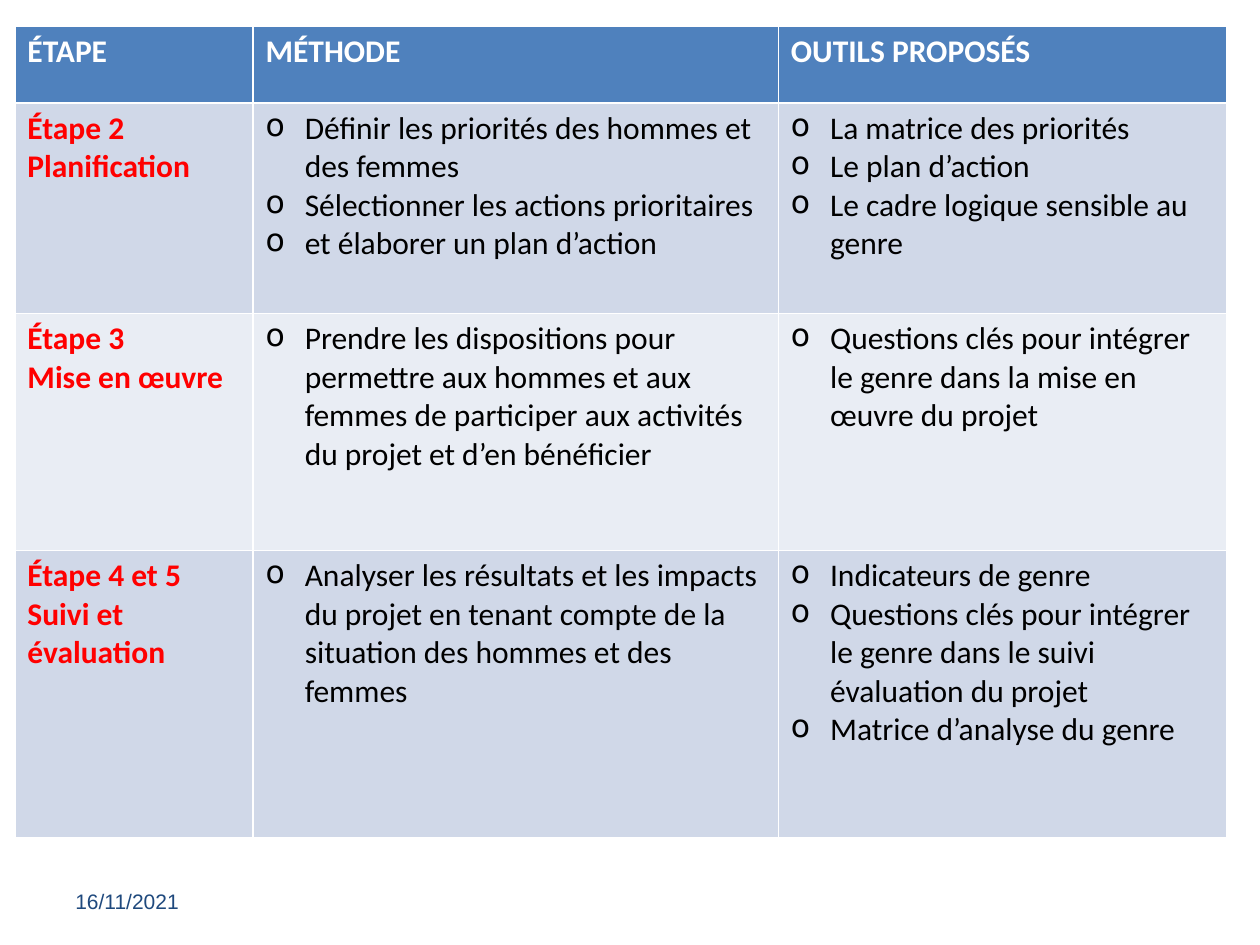
"""Build a slide with a table of project steps, methods and gender tools."""
import pptx
import pptx.dml.color
import pptx.enum.text
import pptx.oxml.ns
import pptx.util
import lxml.etree

Cm = pptx.util.Cm
COLORS = {"header": "4F81BD", "odd": "D0D8E8", "even": "E9EDF4", "white": "FFFFFF",
          "step": "FF0000", "body": "000000", "date": "1F497D"}
HEADERS = ["ÉTAPE", "MÉTHODE", "OUTILS PROPOSÉS"]
STEPS = [
    (["Étape 2", "Planification"],
     ["Définir les priorités des hommes et des femmes",
      "Sélectionner les actions prioritaires",
      "et élaborer un plan d’action"],
     ["La matrice des priorités", "Le plan d’action",
      "Le cadre logique sensible au genre"]),
    (["Étape 3", "Mise en œuvre"],
     ["Prendre les dispositions pour permettre aux hommes et aux femmes "
      "de participer aux activités du projet et d’en bénéficier"],
     ["Questions clés pour intégrer le genre dans la mise en œuvre du projet"]),
    (["Étape 4 et 5", "Suivi et évaluation"],
     ["Analyser les résultats et les impacts du projet en tenant compte "
      "de la situation des hommes et des femmes"],
     ["Indicateurs de genre",
      "Questions clés pour intégrer le genre dans le suivi évaluation du projet",
      "Matrice d’analyse du genre"]),
]
DATE = "16/11/2021"
COL_WIDTHS = [4.8, 10.59, 9.04]
ROW_HEIGHTS = [1.55, 4.24, 4.78, 5.79]
INDENT = Cm(0.79)
FORMATS = {
    "header": {"name": "Calibri", "size": pptx.util.Pt(18), "bold": True},
    "step": {"name": "Calibri", "size": pptx.util.Pt(18), "bold": True},
    "body": {"name": "Calibri", "size": pptx.util.Pt(18), "bold": False},
    "date": {"name": "Arial", "size": pptx.util.Pt(12), "bold": False},
}


def rgb(name):
    return pptx.dml.color.RGBColor.from_string(COLORS[name])


def add_bullet(p):
    pPr = p._p.get_or_add_pPr()
    pPr.set("marL", str(INDENT))
    pPr.set("indent", str(-INDENT))
    bu = lxml.etree.SubElement(pPr, pptx.oxml.ns.qn("a:buChar"))
    bu.set("char", "o")


def write(tf, lines, style, color, bullets=False):
    for i, line in enumerate(lines):
        p = tf.paragraphs[0] if i == 0 else tf.add_paragraph()
        if bullets:
            add_bullet(p)
        r = p.add_run()
        r.text = line
        for key, value in FORMATS[style].items():
            setattr(r.font, key, value)
        r.font.color.rgb = rgb(color)


def add_steps_table(s):
    rows = [[[h] for h in HEADERS], *STEPS]
    sp = s.shapes.add_table(len(rows), len(HEADERS), Cm(0.3), Cm(0.53),
                            Cm(sum(COL_WIDTHS)), Cm(sum(ROW_HEIGHTS)))
    table = sp.table
    for col, width in zip(table.columns, COL_WIDTHS):
        col.width = Cm(width)
    for i, (row, height) in enumerate(zip(rows, ROW_HEIGHTS)):
        table.rows[i].height = Cm(height)
        fill = "header" if i == 0 else ("odd" if i % 2 else "even")
        for j, lines in enumerate(row):
            cell = table.cell(i, j)
            cell.fill.solid()
            cell.fill.fore_color.rgb = rgb(fill)
            style = "header" if i == 0 else ("step" if j == 0 else "body")
            write(cell.text_frame, lines, style,
                  "white" if i == 0 else style, bullets=style == "body")


def add_date(s):
    tf = s.shapes.add_textbox(Cm(1.27), Cm(17.65), Cm(5.92), Cm(1.02)).text_frame
    tf.word_wrap = True
    tf.vertical_anchor = pptx.enum.text.MSO_ANCHOR.MIDDLE
    write(tf, [DATE], "date", "date")


def main():
    prs = pptx.Presentation()
    prs.slide_width, prs.slide_height = Cm(25.4), Cm(19.05)
    s = prs.slides.add_slide(prs.slide_layouts[6])
    add_steps_table(s)
    add_date(s)
    prs.save("out.pptx")


if __name__ == "__main__":
    main()
